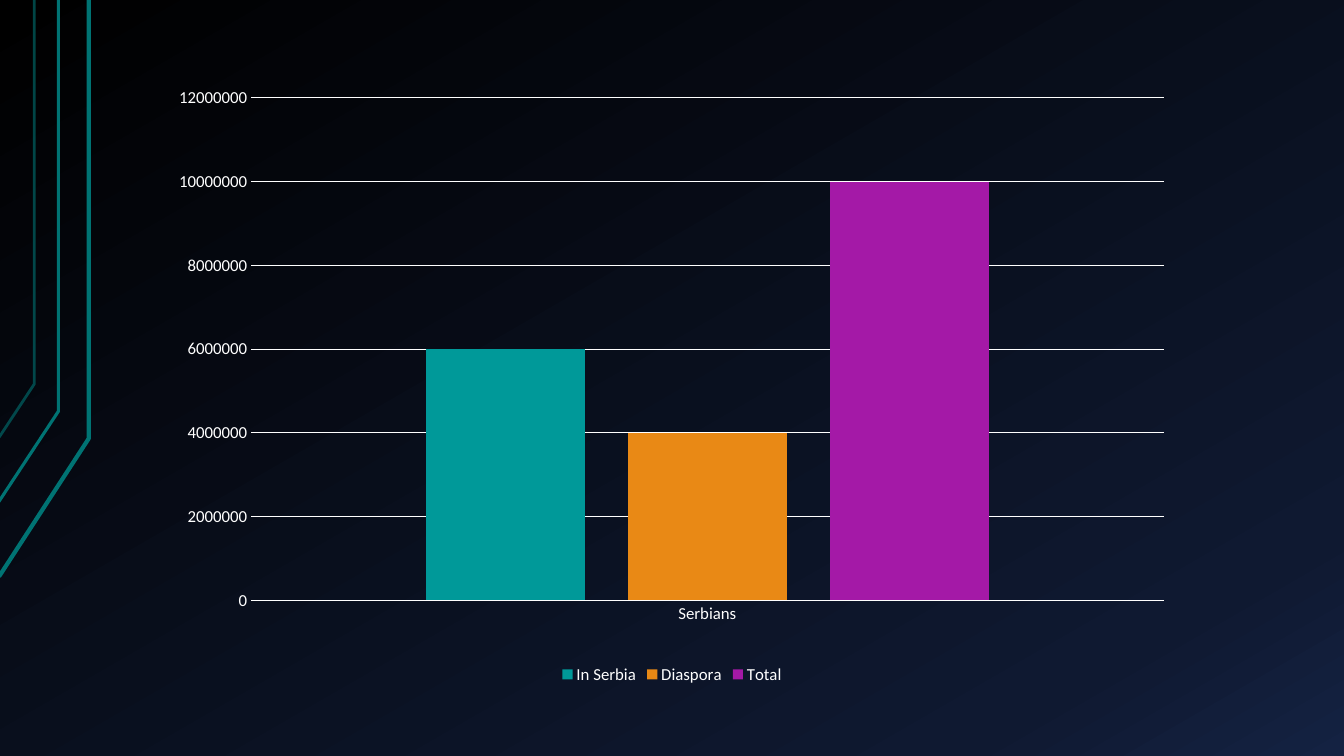
import copy
from dataclasses import dataclass

import lxml.etree
import pptx
import pptx.chart.data
import pptx.dml.color
import pptx.enum.chart
import pptx.oxml.ns
import pptx.oxml.xmlchemy
import pptx.util

Inches = pptx.util.Inches
Pt = pptx.util.Pt
qn = pptx.oxml.ns.qn

FONT = "Calibri"
WHITE = "FFFFFF"
TEAL = "007373"


@dataclass
class CircuitLine:
    points: list[tuple[float, float]]
    width: float
    opacity: int = 100


@dataclass
class Population:
    name: str
    people: int
    color: str


@dataclass
class GradientStop:
    position: float
    color: str


CIRCUIT_LINES = [
    CircuitLine([(-0.01, 5.72), (0.88, 4.35), (0.88, 0)], 3),
    CircuitLine([(-0.02, 4.99), (0.58, 4.08), (0.58, 0)], 2.25),
    CircuitLine([(-0.01, 4.34), (0.34, 3.81), (0.34, 0)], 2, 60),
]
POPULATIONS = [
    Population("In Serbia", 6000000, "009999"),
    Population("Diaspora", 4000000, "E98915"),
    Population("Total", 10000000, "A419A7"),
]
BACKGROUND_STOPS = [
    GradientStop(0, "000000"),
    GradientStop(0.85, "0F1931"),
    GradientStop(1, "142242"),
]
PLOT_LAYOUT = {"x": 0.096, "y": 0.049, "w": 0.876, "h": 0.809}


def rgb(color: str) -> pptx.dml.color.RGBColor:
    return pptx.dml.color.RGBColor.from_string(color)


def style_line(line, color: str, width: float) -> None:
    line.color.rgb = rgb(color)
    line.width = Pt(width)


def style_font(font, size: float) -> None:
    font.name = FONT
    font.size = Pt(size)
    font.color.rgb = rgb(WHITE)


def paint_background(slide) -> None:
    fill = slide.background.fill
    fill.gradient()
    fill.gradient_angle = 300
    stop_list = slide.element.find(".//" + qn("a:gsLst"))
    stop_list.append(copy.deepcopy(stop_list[-1]))
    for stop, wanted in zip(fill.gradient_stops, BACKGROUND_STOPS):
        stop.position = wanted.position
        stop.color.rgb = rgb(wanted.color)


def draw_circuit_line(slide, circuit: CircuitLine) -> None:
    start, *rest = [(Inches(x), Inches(y)) for x, y in circuit.points]
    builder = slide.shapes.build_freeform(*start)
    builder.add_line_segments(rest, close=False)
    shape = builder.convert_to_shape()
    shape.shadow.inherit = False
    shape.fill.background()
    style_line(shape.line, TEAL, circuit.width)
    if circuit.opacity < 100:
        color = shape.element.find(".//" + qn("a:srgbClr"))
        lxml.etree.SubElement(color, qn("a:alpha"), val=str(circuit.opacity * 1000))


def set_plot_layout(chart) -> None:
    """Fix the inner plot area as fractions of the chart."""
    plot_area = chart.element.find(".//" + qn("c:plotArea")) if hasattr(chart, "element") \
        else chart._chartSpace.find(".//" + qn("c:plotArea"))
    layout = plot_area.find(qn("c:layout"))
    if layout is None:
        layout = pptx.oxml.xmlchemy.OxmlElement("c:layout")
        plot_area.insert(0, layout)
    manual = lxml.etree.SubElement(layout, qn("c:manualLayout"))
    settings = {"layoutTarget": "inner", "xMode": "edge", "yMode": "edge", **PLOT_LAYOUT}
    for name, value in settings.items():
        lxml.etree.SubElement(manual, qn(f"c:{name}"), val=str(value))


def draw_population_chart(slide) -> None:
    data = pptx.chart.data.CategoryChartData()
    data.categories = ["Serbians"]
    for population in POPULATIONS:
        data.add_series(population.name, [population.people])
    chart = slide.shapes.add_chart(
        pptx.enum.chart.XL_CHART_TYPE.COLUMN_CLUSTERED,
        Inches(1.5), Inches(0.67), Inches(10.33), Inches(6.16), data,
    ).chart
    style_font(chart.font, 10)
    chart.has_title = False
    set_plot_layout(chart)

    plot = chart.plots[0]
    plot.gap_width = 219
    plot.overlap = -27
    plot.vary_by_categories = False
    for series, population in zip(plot.series, POPULATIONS):
        series.format.fill.solid()
        series.format.fill.fore_color.rgb = rgb(population.color)

    category_axis, value_axis = chart.category_axis, chart.value_axis
    for axis in (category_axis, value_axis):
        axis.major_tick_mark = pptx.enum.chart.XL_TICK_MARK.NONE
        axis.minor_tick_mark = pptx.enum.chart.XL_TICK_MARK.NONE
        style_font(axis.tick_labels.font, 12)
    style_line(category_axis.format.line, WHITE, 0.75)
    value_axis.format.line.fill.background()
    value_axis.minimum_scale = 0
    value_axis.maximum_scale = 12000000
    value_axis.major_unit = 2000000
    style_line(value_axis.major_gridlines.format.line, WHITE, 0.75)

    chart.has_legend = True
    chart.legend.position = pptx.enum.chart.XL_LEGEND_POSITION.BOTTOM
    chart.legend.include_in_layout = False
    style_font(chart.legend.font, 12)


def main() -> None:
    presentation = pptx.Presentation()
    presentation.slide_width = Inches(13.33)
    presentation.slide_height = Inches(7.5)
    slide = presentation.slides.add_slide(presentation.slide_layouts[6])
    paint_background(slide)
    for circuit in CIRCUIT_LINES:
        draw_circuit_line(slide, circuit)
    draw_population_chart(slide)
    presentation.save("out.pptx")


if __name__ == "__main__":
    main()
